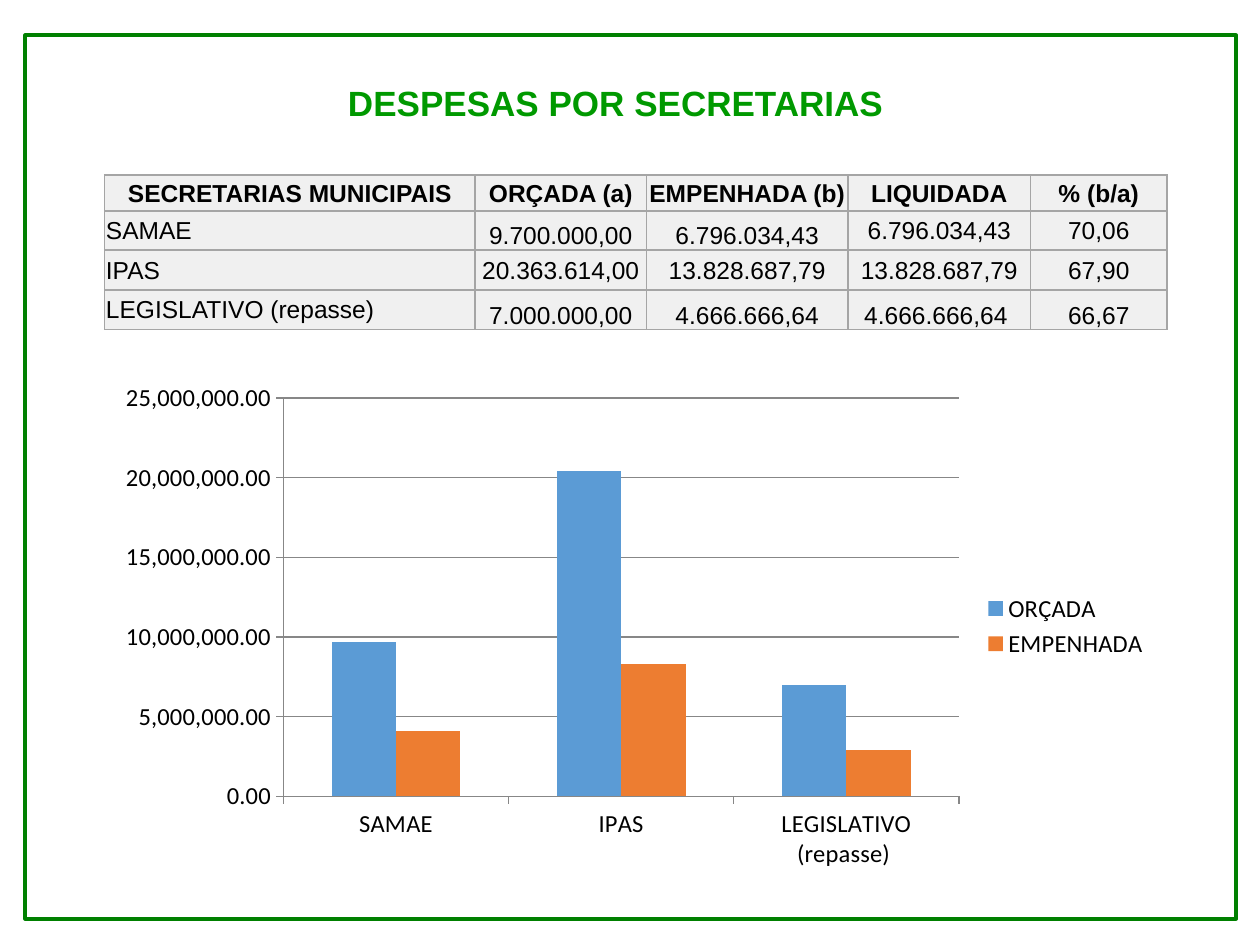
from dataclasses import dataclass

from lxml import etree
from pptx import Presentation
from pptx.chart.data import CategoryChartData
from pptx.dml.color import RGBColor
from pptx.enum.chart import XL_CHART_TYPE, XL_LEGEND_POSITION, XL_TICK_MARK
from pptx.enum.shapes import MSO_SHAPE
from pptx.enum.text import MSO_ANCHOR, MSO_AUTO_SIZE, PP_ALIGN
from pptx.oxml.ns import qn
from pptx.util import Pt

COLUMN_CLUSTERED = XL_CHART_TYPE.COLUMN_CLUSTERED
LEGEND_RIGHT = XL_LEGEND_POSITION.RIGHT
TICK_OUTSIDE = XL_TICK_MARK.OUTSIDE
RECTANGLE = MSO_SHAPE.RECTANGLE
MIDDLE, BOTTOM = MSO_ANCHOR.MIDDLE, MSO_ANCHOR.BOTTOM
LEFT, CENTER = PP_ALIGN.LEFT, PP_ALIGN.CENTER
FIT_SHAPE = MSO_AUTO_SIZE.SHAPE_TO_FIT_TEXT

COLORS = {
    "frame": "008000",
    "title": "009900",
    "text": "000000",
    "cell": "F0F0F0",
    "border": "A5A5A5",
    "axis": "878787",
    "budgeted": "5B9BD5",
    "committed": "ED7D31",
}


@dataclass(frozen=True)
class Box:
    left: float
    top: float
    width: float
    height: float

    def lengths(self) -> tuple:
        return Pt(self.left), Pt(self.top), Pt(self.width), Pt(self.height)


@dataclass(frozen=True)
class TableRow:
    height: float
    texts: tuple
    bottom_columns: tuple = ()
    header: bool = False


@dataclass(frozen=True)
class Series:
    name: str
    values: tuple
    color: str


FRAME_BOX = Box(14.4, 20.2, 692, 504.7)
TITLE_BOX = Box(150.5, 43.2, 408.2, 31.7)
TABLE_BOX = Box(59.8, 100.1, 607, 88.2)
CHART_BOX = Box(59.8, 213.1, 607, 289.4)

COLUMN_WIDTHS = (211.7, 97.9, 115.2, 104.4, 77.8)
ROWS = (
    TableRow(20.6, ("SECRETARIAS MUNICIPAIS", "ORÇADA (a)", "EMPENHADA (b)",
                    "LIQUIDADA", "% (b/a)"), header=True),
    TableRow(22.2, ("SAMAE", "9.700.000,00", "6.796.034,43",
                    "6.796.034,43", "70,06"), bottom_columns=(1, 2)),
    TableRow(22.8, ("IPAS", "20.363.614,00", "13.828.687,79",
                    "13.828.687,79", "67,90")),
    TableRow(22.6, ("LEGISLATIVO (repasse)", "7.000.000,00", "4.666.666,64",
                    "4.666.666,64 ", "66,67"), bottom_columns=(1, 2, 3, 4)),
)

CATEGORIES = ("SAMAE", "IPAS", "LEGISLATIVO (repasse) ")
SERIES = (
    Series("ORÇADA ", (9_700_000, 20_400_000, 7_000_000), "budgeted"),
    Series("EMPENHADA ", (4_100_000, 8_300_000, 2_900_000), "committed"),
)


def color(name: str) -> RGBColor:
    return RGBColor.from_string(COLORS[name])


def style_font(font, name: str, size: float, color_name: str, bold: bool = False) -> None:
    font.name = name
    font.size = Pt(size)
    font.bold = bold
    font.color.rgb = color(color_name)


def add_frame(slide, box: Box) -> None:
    frame = slide.shapes.add_shape(RECTANGLE, *box.lengths())
    frame.shadow.inherit = False
    frame.fill.background()
    frame.line.color.rgb = color("frame")
    frame.line.width = Pt(2.25)


def add_title(slide, box: Box, text: str) -> None:
    text_frame = slide.shapes.add_textbox(*box.lengths()).text_frame
    text_frame.word_wrap = True
    text_frame.auto_size = FIT_SHAPE
    paragraph = text_frame.paragraphs[0]
    paragraph.alignment = CENTER
    run = paragraph.add_run()
    run.text = text
    style_font(run.font, "Arial", 20, "title", bold=True)


def add_cell_borders(cell) -> None:
    """Outline the cell; must precede the fill, as the schema orders lines first."""
    properties = cell._tc.get_or_add_tcPr()
    for side in ("a:lnL", "a:lnR", "a:lnT", "a:lnB"):
        line = etree.SubElement(properties, qn(side), w=str(Pt(1)))
        fill = etree.SubElement(line, qn("a:solidFill"))
        etree.SubElement(fill, qn("a:srgbClr"), val=COLORS["border"])


def fill_cell(cell, text: str, alignment, anchor, bold: bool) -> None:
    add_cell_borders(cell)
    cell.fill.solid()
    cell.fill.fore_color.rgb = color("cell")
    cell.margin_left = cell.margin_right = cell.margin_top = Pt(0.72)
    cell.margin_bottom = Pt(0)
    cell.vertical_anchor = anchor
    paragraph = cell.text_frame.paragraphs[0]
    paragraph.alignment = alignment
    run = paragraph.add_run()
    run.text = text
    style_font(run.font, "Arial", 14, "text", bold)


def add_expense_table(slide, box: Box, rows: tuple) -> None:
    table = slide.shapes.add_table(len(rows), len(COLUMN_WIDTHS), *box.lengths()).table
    table.first_row = table.horz_banding = False
    for column, width in zip(table.columns, COLUMN_WIDTHS):
        column.width = Pt(width)
    for row_index, row in enumerate(rows):
        table.rows[row_index].height = Pt(row.height)
        for column_index, text in enumerate(row.texts):
            alignment = CENTER if row.header or column_index else LEFT
            anchor = BOTTOM if column_index in row.bottom_columns else MIDDLE
            fill_cell(table.cell(row_index, column_index), text, alignment, anchor, row.header)


def style_axis(axis) -> None:
    axis.major_tick_mark = TICK_OUTSIDE
    axis.format.line.color.rgb = color("axis")
    style_font(axis.tick_labels.font, "Calibri", 14, "text")


def add_expense_chart(slide, box: Box, series_list: tuple) -> None:
    data = CategoryChartData(number_format="#,##0.00")
    data.categories = CATEGORIES
    for series in series_list:
        data.add_series(series.name, series.values)
    chart = slide.shapes.add_chart(COLUMN_CLUSTERED, *box.lengths(), data).chart
    style_font(chart.font, "Calibri", 10, "text")
    chart.has_title = False
    chart.has_legend = True
    chart.legend.position = LEGEND_RIGHT
    chart.legend.include_in_layout = False
    style_font(chart.legend.font, "Calibri", 14, "text")

    style_axis(chart.category_axis)
    value_axis = chart.value_axis
    style_axis(value_axis)
    value_axis.minimum_scale = 0
    value_axis.maximum_scale = 25_000_000
    value_axis.major_unit = 5_000_000
    value_axis.tick_labels.number_format = "#,##0.00"
    value_axis.tick_labels.number_format_is_linked = False
    value_axis.major_gridlines.format.line.color.rgb = color("axis")

    plot = chart.plots[0]
    plot.gap_width = 150
    plot.overlap = 0
    plot.vary_by_categories = False
    for drawn, series in zip(plot.series, series_list):
        drawn.format.fill.solid()
        drawn.format.fill.fore_color.rgb = color(series.color)


def main() -> None:
    presentation = Presentation()
    presentation.slide_width, presentation.slide_height = Pt(720), Pt(540)
    slide = presentation.slides.add_slide(presentation.slide_layouts[6])
    add_expense_table(slide, TABLE_BOX, ROWS)
    add_frame(slide, FRAME_BOX)
    add_title(slide, TITLE_BOX, "DESPESAS POR SECRETARIAS ")
    add_expense_chart(slide, CHART_BOX, SERIES)
    presentation.save("out.pptx")


if __name__ == "__main__":
    main()
